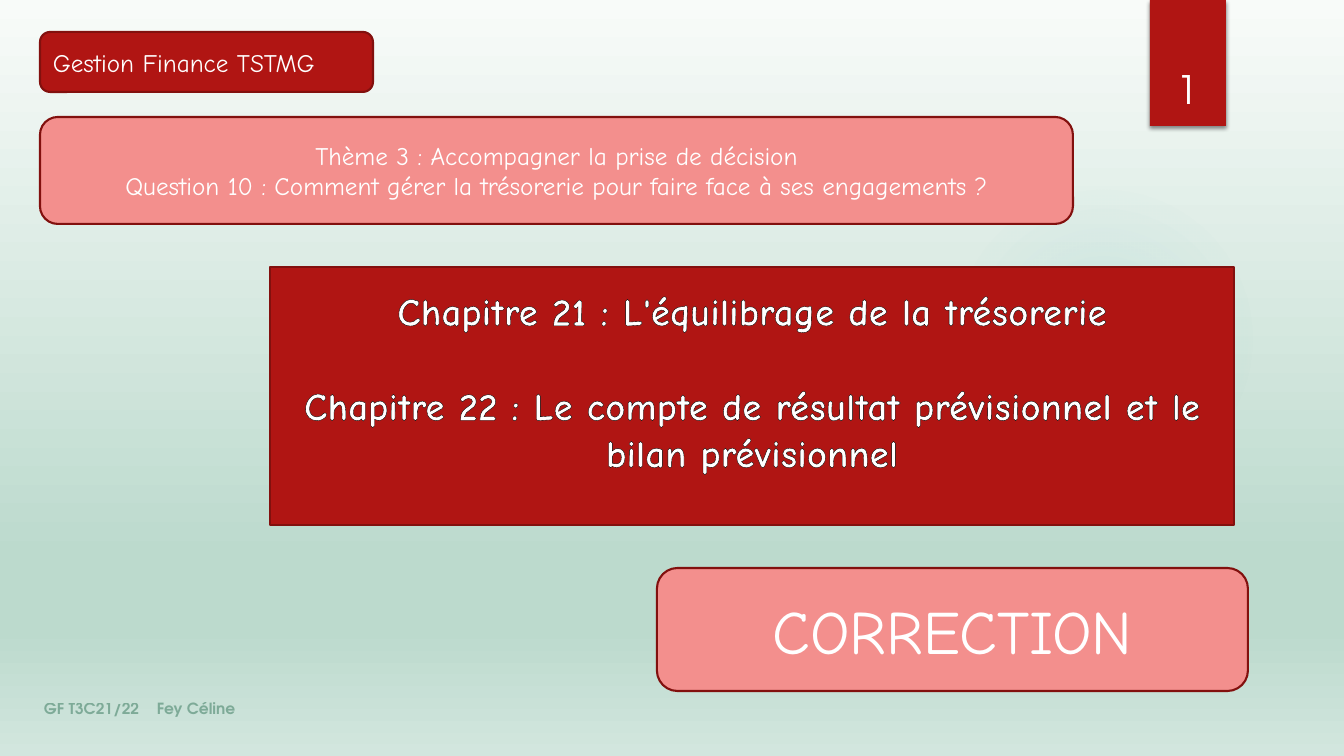
from lxml import etree
from pptx import Presentation
from pptx.dml.color import RGBColor
from pptx.enum.shapes import MSO_SHAPE
from pptx.enum.text import MSO_ANCHOR, MSO_AUTO_SIZE, PP_ALIGN
from pptx.oxml import parse_xml
from pptx.oxml.ns import nsdecls, qn
from pptx.util import Emu, Pt

LEFT, CENTER = PP_ALIGN.LEFT, PP_ALIGN.CENTER
MIDDLE, BOTTOM = MSO_ANCHOR.MIDDLE, MSO_ANCHOR.BOTTOM
RECT, OVAL, ROUNDED = MSO_SHAPE.RECTANGLE, MSO_SHAPE.OVAL, MSO_SHAPE.ROUNDED_RECTANGLE
NO_AUTOFIT = MSO_AUTO_SIZE.NONE

WHITE = RGBColor(0xFF, 0xFF, 0xFF)
BLACK = RGBColor(0x00, 0x00, 0x00)
RED = RGBColor(0xB0, 0x15, 0x13)
DARK_RED = RGBColor(0x82, 0x10, 0x0E)
PINK = RGBColor(0xF3, 0x8F, 0x8D)
GREEN = RGBColor(0x4B, 0x86, 0x6D)
TEAL = RGBColor(0x50, 0xB9, 0xC1)
MIST = RGBColor(0xF8, 0xFB, 0xF9)
SAGE = RGBColor(0xBC, 0xDA, 0xCD)
PALE_SAGE = RGBColor(0xD2, 0xE6, 0xDE)

HAND_FONT = "Comic Neue"
THEME_FONT = "TeX Gyre Adventor"
EMU_PER_PX = 914400 / 100.8


def px(length):
    return Emu(round(length * EMU_PER_PX))


def set_gradient(parent, stops, direction):
    """Swap the solid fill of parent for a gradient of (position, colour, alpha) stops."""
    stop_xml = "".join(
        f'<a:gs pos="{pos * 1000}"><a:srgbClr val="{colour}">'
        f'<a:alpha val="{alpha * 1000}"/></a:srgbClr></a:gs>'
        for pos, colour, alpha in stops)
    gradient = parse_xml(f'<a:gradFill {nsdecls("a")} rotWithShape="1">'
                         f'<a:gsLst>{stop_xml}</a:gsLst>{direction}</a:gradFill>')
    parent.replace(parent.find(qn("a:solidFill")), gradient)


def add_decoration(slide, kind, box, colour):
    decoration = slide.shapes.add_shape(kind, *map(px, box))
    decoration.shadow.inherit = False
    decoration.fill.solid()
    decoration.fill.fore_color.rgb = colour
    decoration.line.fill.background()
    return decoration


def write(holder, paragraphs, size, font=HAND_FONT, colour=WHITE,
          align=CENTER, anchor=MIDDLE, bold=False):
    frame = holder.text_frame
    frame.word_wrap = True
    frame.auto_size = NO_AUTOFIT
    frame.vertical_anchor = anchor
    for number, text in enumerate(paragraphs):
        paragraph = frame.add_paragraph() if number else frame.paragraphs[0]
        paragraph.text = text
        paragraph.alignment = align
        for run in paragraph.runs:
            run.font.name = font
            run.font.size = Pt(size)
            run.font.bold = bold
            run.font.color.rgb = colour
    return frame


def style_panel(panel, colour):
    panel.fill.solid()
    panel.fill.fore_color.rgb = colour
    panel.line.color.rgb = DARK_RED
    panel.line.width = Pt(1.5)


def add_panel(slide, box, colour, text, size, align=CENTER):
    panel = slide.shapes.add_shape(ROUNDED, *map(px, box))
    panel.shadow.inherit = False
    style_panel(panel, colour)
    write(panel, [text], size, align=align)


def add_label(slide, box, text, size, **style):
    label = slide.shapes.add_textbox(*map(px, box))
    return write(label, [text], size, font=THEME_FONT, anchor=BOTTOM, **style)


def place_title(slide, box, chapters):
    title = slide.shapes.title
    title.left, title.top, title.width, title.height = map(px, box)
    title._element.spPr.append(parse_xml(
        f'<a:prstGeom {nsdecls("a")} prst="roundRect"><a:avLst/></a:prstGeom>'))
    style_panel(title, RED)
    frame = write(title, chapters, 28, bold=True)
    frame.margin_bottom = px(35)
    frame.paragraphs[1].space_before = Pt(34)
    for paragraph in frame.paragraphs:
        for run in paragraph.runs:
            run._r.get_or_add_rPr().insert(0, parse_xml(
                f'<a:ln {nsdecls("a")} w="{Pt(1.06)}"><a:solidFill>'
                f'<a:srgbClr val="{BLACK}"/></a:solidFill></a:ln>'))
    # Bring the title in front of the background decoration
    slide.shapes._spTree.append(title._element)


def add_footer(slide):
    frame = add_label(slide, (34, 690, 425, 33), "GF T3C21/22\tFey Céline", 11,
                      colour=GREEN, align=LEFT, bold=True)
    paragraph = frame.paragraphs[0]
    tabs = etree.SubElement(paragraph._p.get_or_add_pPr(), qn("a:tabLst"))
    etree.SubElement(tabs, qn("a:tab"), pos=str(px(113)), algn="l")
    for colour in paragraph._p.iter(qn("a:srgbClr")):
        etree.SubElement(colour, qn("a:alpha"), val="60000")


def main():
    deck = Presentation()
    deck.slide_width, deck.slide_height = px(1344), px(756)
    slide = deck.slides.add_slide(deck.slide_layouts[5])

    # Background and soft glow
    slide.background.fill.solid()
    set_gradient(slide._element.cSld.bg.bgPr,
                 [(0, MIST, 100), (74, SAGE, 100), (83, SAGE, 100), (100, PALE_SAGE, 100)],
                 '<a:lin ang="5400000" scaled="0"/>')
    glow = add_decoration(slide, OVAL, (949, 184, 310, 310), TEAL)
    set_gradient(glow._element.spPr, [(0, TEAL, 7), (36, TEAL, 6), (69, TEAL, 0)],
                 '<a:path path="circle"><a:fillToRect l="50000" t="50000" '
                 'r="50000" b="50000"/></a:path>')

    # Page number on its ribbon
    ribbon = add_decoration(slide, RECT, (1150, 0, 76, 126), RED)
    ribbon_effects = ribbon._element.spPr.find(qn("a:effectLst"))
    ribbon_effects.append(parse_xml(
        f'<a:outerShdw {nsdecls("a")} blurRad="{Pt(3)}" dist="{Pt(2)}" dir="5400000">'
        f'<a:srgbClr val="{BLACK}"><a:alpha val="45000"/></a:srgbClr></a:outerShdw>'))
    add_label(slide, (1141, 32, 93, 85), "1", 28)

    add_footer(slide)

    # Course, theme, chapters and document type
    add_panel(slide, (40, 32, 333, 60), RED, "Gestion Finance TSTMG", 18, LEFT)
    add_panel(slide, (40, 117, 1033, 107), PINK,
              "Thème 3 : Accompagner la prise de décision\n"
              "Question 10 : Comment gérer la trésorerie pour faire face à ses engagements ?",
              18)
    place_title(slide, (270, 267, 964, 258), [
        "Chapitre 21 : L'équilibrage de la trésorerie",
        "Chapitre 22 : Le compte de résultat prévisionnel et le bilan prévisionnel",
    ])
    add_panel(slide, (657, 568, 591, 123), PINK, "CORRECTION", 44)

    deck.save("out.pptx")


if __name__ == "__main__":
    main()
